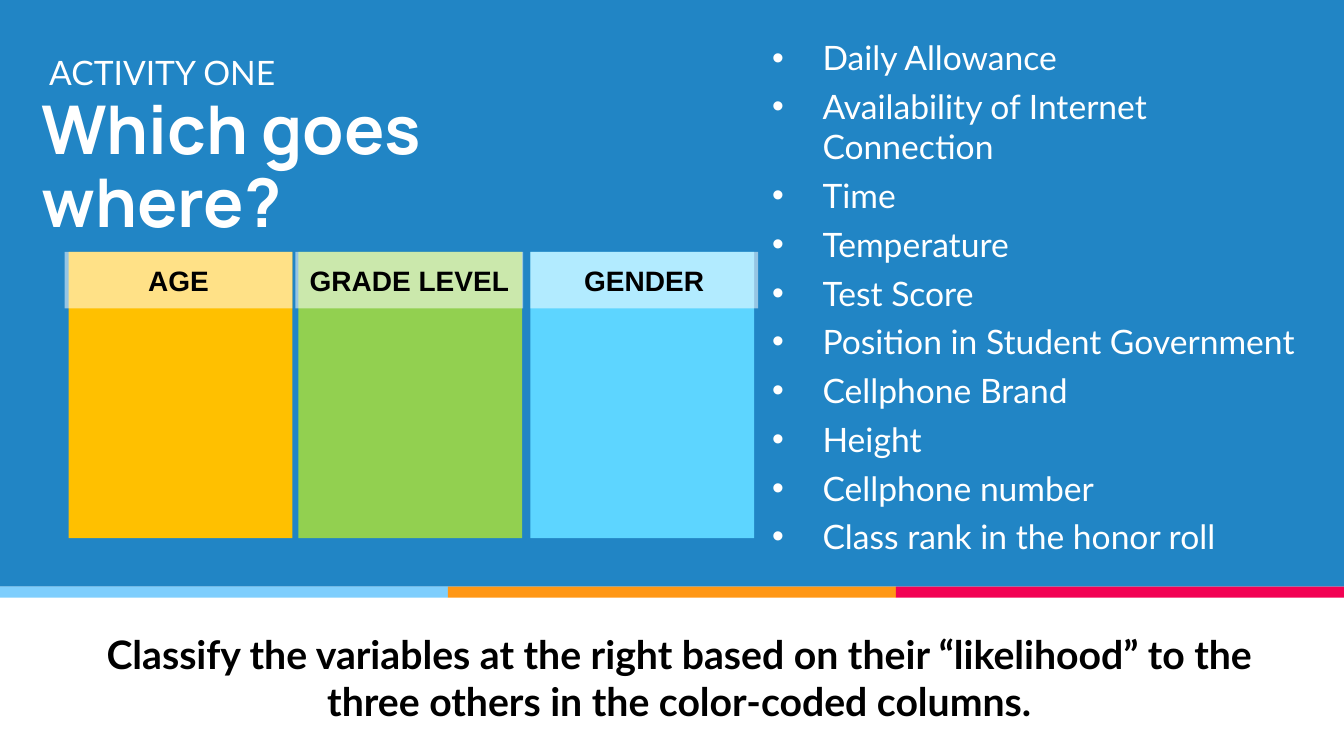
"""Build the "Which goes where?" classification activity slide."""
import pptx
import pptx.dml.color
import pptx.enum.shapes
import pptx.enum.text
import pptx.oxml
import pptx.oxml.ns
import pptx.util

Inches, Pt = pptx.util.Inches, pptx.util.Pt
RGBColor = pptx.dml.color.RGBColor
PP_ALIGN = pptx.enum.text.PP_ALIGN
MSO_ANCHOR = pptx.enum.text.MSO_ANCHOR
RECTANGLE = pptx.enum.shapes.MSO_SHAPE.RECTANGLE

WHITE = RGBColor(0xFF, 0xFF, 0xFF)
BLACK = RGBColor(0, 0, 0)
BLUE = RGBColor(0x21, 0x85, 0xC5)
STRIPES = [
    RGBColor(0x7E, 0xCE, 0xFD),
    RGBColor(0xFF, 0x97, 0x15),
    RGBColor(0xF2, 0x02, 0x53),
]

TITLE = "Which goes where?"
SUBTITLE = "ACTIVITY ONE"
VARIABLES = [
    "Daily Allowance",
    "Availability of Internet Connection",
    "Time",
    "Temperature",
    "Test Score",
    "Position in Student Government",
    "Cellphone Brand",
    "Height",
    "Cellphone number",
    "Class rank in the honor roll",
]
INSTRUCTION = (
    "Classify the variables at the right based on their “likelihood” "
    "to the three others in the color-coded columns."
)
COLUMNS = [
    ("AGE", RGBColor(0xFF, 0xC0, 0x00), 0.68, 0.64),
    ("GRADE LEVEL", RGBColor(0x92, 0xD0, 0x50), 2.96, 2.93),
    ("GENDER", RGBColor(0x5D, 0xD5, 0xFF), 5.26, 5.26),
]

SLIDE_W, SLIDE_H = 13.33, 7.5
BAND_H, STRIPE_H = 5.82, 0.11
COLUMN_TOP, COLUMN_W, COLUMN_H = 2.5, 2.22, 2.84
HEADER_W, HEADER_H = 2.26, 0.56


def add_rect(slide, left, top, width, height, color):
    sp = slide.shapes.add_shape(
        RECTANGLE, Inches(left), Inches(top), Inches(width), Inches(height))
    sp.shadow.inherit = False
    sp.fill.solid()
    sp.fill.fore_color.rgb = color
    sp.line.fill.background()
    return sp


def write(tf, lines, font, size, color, bold=False, align=PP_ALIGN.LEFT):
    tf.word_wrap = True
    for i, line in enumerate(lines):
        p = tf.add_paragraph() if i else tf.paragraphs[0]
        p.text = line
        p.alignment = align
        p.font.name = font
        p.font.size = Pt(size)
        p.font.bold = bold
        p.font.color.rgb = color


def add_text(slide, left, top, width, height, lines, *style, **options):
    tf = slide.shapes.add_textbox(
        Inches(left), Inches(top), Inches(width), Inches(height)).text_frame
    tf.margin_left = tf.margin_right = Inches(0.1)
    tf.margin_top = tf.margin_bottom = Inches(0.1)
    write(tf, lines, *style, **options)
    return tf


def add_bullet(p):
    p.space_after = Pt(6)
    pPr = p._p.get_or_add_pPr()
    pPr.set("marL", str(Inches(0.5)))
    pPr.set("indent", str(-Inches(0.5)))
    ns = pptx.oxml.ns.nsdecls("a")
    for xml in (
        f'<a:buClr {ns}><a:srgbClr val="{WHITE}"/></a:buClr>',
        f'<a:buFont {ns} typeface="Arial"/>',
        f'<a:buChar {ns} char="•"/>',
    ):
        pPr.insert_element_before(
            pptx.oxml.parse_xml(xml), "a:tabLst", "a:defRPr", "a:extLst")


def set_opacity(sp, percent):
    clr = sp.fill._xPr.find(".//" + pptx.oxml.ns.qn("a:srgbClr"))
    ns = pptx.oxml.ns.nsdecls("a")
    clr.append(pptx.oxml.parse_xml(f'<a:alpha {ns} val="{percent * 1000}"/>'))


def main():
    prs = pptx.Presentation()
    prs.slide_width, prs.slide_height = Inches(SLIDE_W), Inches(SLIDE_H)
    s = prs.slides.add_slide(prs.slide_layouts[6])

    add_rect(s, 0, 0, SLIDE_W, BAND_H, BLUE)
    stripe_w = SLIDE_W / len(STRIPES)
    for i, color in enumerate(STRIPES):
        add_rect(s, i * stripe_w, BAND_H, stripe_w, STRIPE_H, color)

    tf = add_text(s, 0.31, 1.48, 6.04, 1.02, [TITLE], "Manrope", 48, WHITE, bold=True)
    tf.vertical_anchor = MSO_ANCHOR.BOTTOM
    tf.paragraphs[0].line_spacing = 0.9
    add_text(s, 0.39, 0.41, 4.56, 0.78, [SUBTITLE], "Lato", 24, WHITE)

    tf = add_text(s, 7.56, 0.27, 5.52, 5.56, VARIABLES, "Lato", 24, WHITE)
    for p in tf.paragraphs:
        add_bullet(p)

    for name, color, left, header_left in COLUMNS:
        add_rect(s, left, COLUMN_TOP, COLUMN_W, COLUMN_H, color)
        header = add_rect(s, header_left, COLUMN_TOP, HEADER_W, HEADER_H, WHITE)
        set_opacity(header, 53)
        header.text_frame.vertical_anchor = MSO_ANCHOR.MIDDLE
        write(header.text_frame, [name], "Arial", 20, BLACK,
              bold=True, align=PP_ALIGN.CENTER)

    add_text(s, 0.68, 6.15, 12.11, 0.78, [INSTRUCTION], "Lato", 28, BLACK,
             bold=True, align=PP_ALIGN.CENTER)

    prs.save("out.pptx")


if __name__ == "__main__":
    main()
